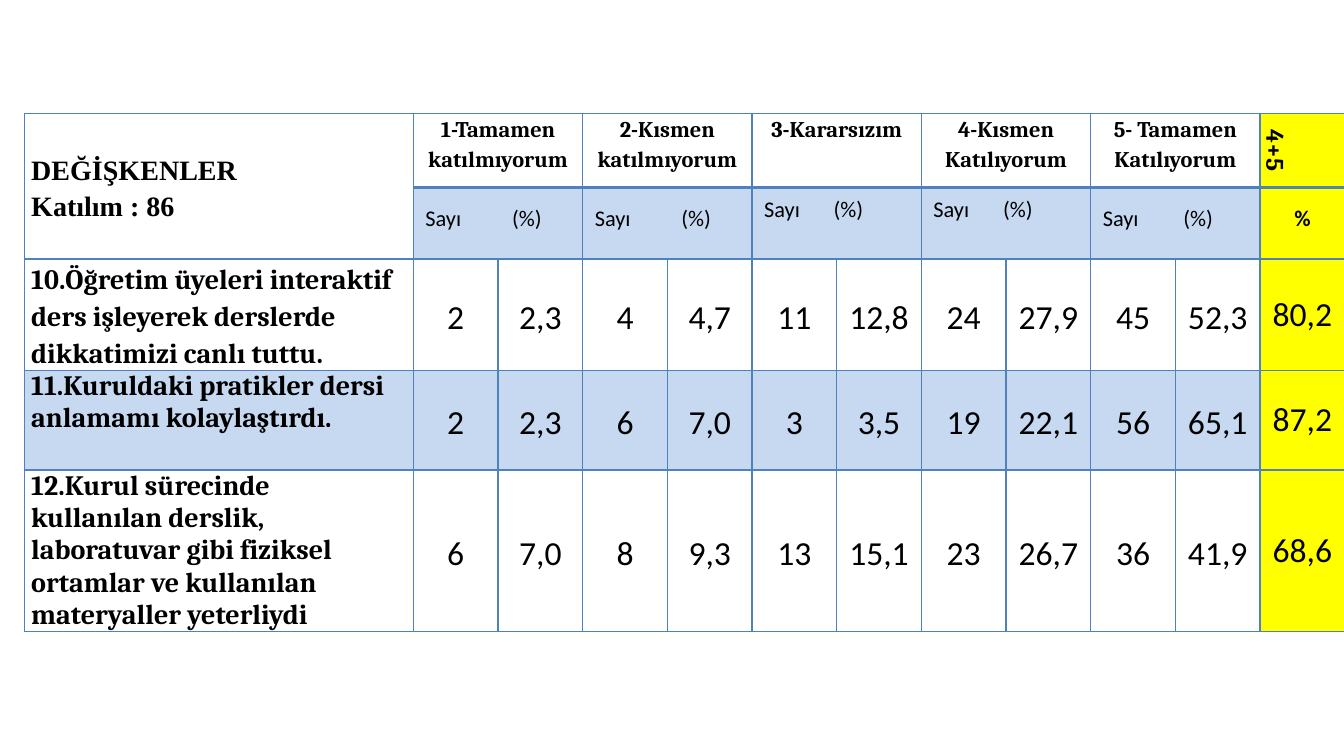
from lxml import etree
from pptx import Presentation
from pptx.dml.color import RGBColor
from pptx.enum.text import MSO_ANCHOR, PP_ALIGN
from pptx.oxml.ns import qn
from pptx.util import Inches, Pt

TOP, MIDDLE = MSO_ANCHOR.TOP, MSO_ANCHOR.MIDDLE
LEFT, CENTER = PP_ALIGN.LEFT, PP_ALIGN.CENTER

COLORS = {"line": "4F81BD", "band": "C6D9F1", "total": "FFFF00", "text": "000000"}
LABEL_WIDTH, VALUE_WIDTH = 3.86, 0.84
ROW_HEIGHTS = [0.73, 0.71, 1.1, 0.99, 1.6]
SIDE_MARGIN = 0.07

# Heading, distance from "Sayı" to "(%)", bottom margin of the subheading
CHOICES = [
    ("1-Tamamen katılmıyorum", 0.86, 0),
    ("2-Kısmen katılmıyorum", 0.86, 0),
    ("3-Kararsızım", 0.69, 0.18),
    ("4-Kısmen Katılıyorum", 0.69, 0.18),
    ("5- Tamamen Katılıyorum", 0.8, 0),
]
# Statement, its line spacing, counts and percentages, total
ANSWERS = [
    ("10.Öğretim üyeleri interaktif ders işleyerek derslerde dikkatimizi canlı tuttu.", 1.15,
     ["2", "2,3", "4", "4,7", "11", "12,8", "24", "27,9", "45", "52,3"], "80,2"),
    ("11.Kuruldaki pratikler dersi anlamamı kolaylaştırdı.", 1.0,
     ["2", "2,3", "6", "7,0", "3", "3,5", "19", "22,1", "56", "65,1"], "87,2"),
    ("12.Kurul sürecinde kullanılan derslik, laboratuvar gibi fiziksel ortamlar ve "
     "kullanılan materyaller yeterliydi", 1.0,
     ["6", "7,0", "8", "9,3", "13", "15,1", "23", "26,7", "36", "41,9"], "68,6"),
]


def write_cell(cell, text, size, font="Calibri", bold=False, align=CENTER, anchor=MIDDLE,
               spacing=1.15, margin=SIDE_MARGIN, bottom=0, tab=None):
    cell.margin_left = cell.margin_right = Inches(margin)
    cell.margin_top, cell.margin_bottom = 0, Inches(bottom)
    cell.vertical_anchor = anchor
    cell.text_frame.text = text
    for para in cell.text_frame.paragraphs:
        para.alignment = align
        para.line_spacing = spacing
        if tab:
            stops = etree.SubElement(para._p.get_or_add_pPr(), qn("a:tabLst"))
            etree.SubElement(stops, qn("a:tab"), pos=str(Inches(tab)), algn="l")
        para.font.name, para.font.size, para.font.bold = font, Pt(size), bold
        para.font.color.rgb = RGBColor.from_string(COLORS["text"])


def paint_cell(cell, fill, top=1, bottom=1):
    """Fill a cell and draw its four borders, widths in points."""
    if fill:
        cell.fill.solid()
        cell.fill.fore_color.rgb = RGBColor.from_string(COLORS[fill])
    else:
        cell.fill.background()
    widths = {"a:lnL": 1, "a:lnR": 1, "a:lnT": top, "a:lnB": bottom}
    for place, (side, width) in enumerate(widths.items()):
        line = etree.Element(qn(side), w=str(Pt(width)))
        paint = etree.SubElement(line, qn("a:solidFill"))
        etree.SubElement(paint, qn("a:srgbClr"), val=COLORS["line"])
        cell._tc.get_or_add_tcPr().insert(place, line)


def paint_table(table):
    last = len(table.columns) - 1
    for row in range(len(table.rows)):
        for column in range(last + 1):
            fill = "band" if row % 2 and (column or row > 1) else None
            paint_cell(table.cell(row, column), "total" if column == last else fill,
                       top=2.25 if row == 1 and column else 1,
                       bottom=2.25 if row == 0 and column else 1)


def write_headings(table):
    corner = table.cell(0, 0)
    corner.merge(table.cell(1, 0))
    write_cell(corner, "DEĞİŞKENLER\nKatılım : 86", 20, "Times New Roman", True, LEFT)
    for number, (heading, tab, bottom) in enumerate(CHOICES):
        column = 1 + 2 * number
        for row in (0, 1):
            table.cell(row, column).merge(table.cell(row, column + 1))
        write_cell(table.cell(0, column), heading, 16, "Cambria", True, anchor=TOP)
        write_cell(table.cell(1, column), "Sayı\t(%)", 16, align=LEFT, spacing=Pt(13),
                   margin=0.12, bottom=bottom, tab=tab)
    last = len(table.columns) - 1
    write_cell(table.cell(0, last), "4+5", 18, "Cambria", True, anchor=TOP)
    table.cell(0, last)._tc.get_or_add_tcPr().set("vert", "vert")
    write_cell(table.cell(1, last), "%", 16, bold=True, spacing=Pt(13))


def write_answers(table):
    for row, (statement, spacing, values, total) in enumerate(ANSWERS, 2):
        write_cell(table.cell(row, 0), statement, 20, "Cambria", True, LEFT, TOP, spacing)
        for column, value in enumerate(values, 1):
            write_cell(table.cell(row, column), value, 24)
        write_cell(table.cell(row, len(values) + 1), total, 24, spacing=1.0, margin=0.01)


def add_survey_table(page, left, top):
    widths = [LABEL_WIDTH] + [VALUE_WIDTH] * (2 * len(CHOICES) + 1)
    frame = page.shapes.add_table(len(ROW_HEIGHTS), len(widths), Inches(left), Inches(top),
                                  Inches(sum(widths)), Inches(sum(ROW_HEIGHTS)))
    table = frame.table
    table.first_row = table.horz_banding = False
    for column, width in zip(table.columns, widths):
        column.width = Inches(width)
    for row, height in zip(table.rows, ROW_HEIGHTS):
        row.height = Inches(height)
    paint_table(table)
    write_headings(table)
    write_answers(table)


def main():
    deck = Presentation()
    deck.slide_width, deck.slide_height = Inches(13.33), Inches(7.5)
    page = deck.slides.add_slide(deck.slide_layouts[6])
    add_survey_table(page, 0.24, 1.13)
    deck.save("out.pptx")


if __name__ == "__main__":
    main()
